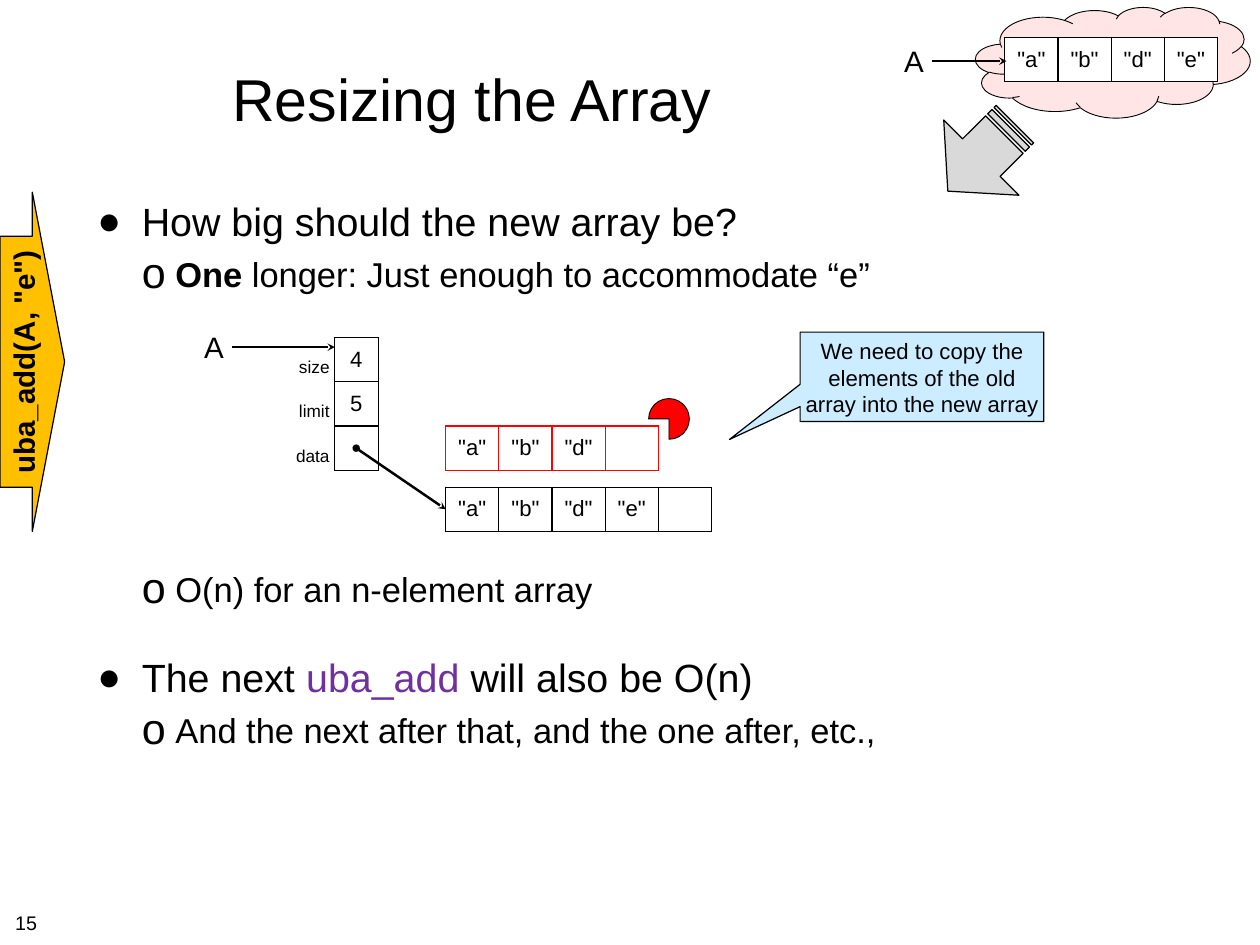
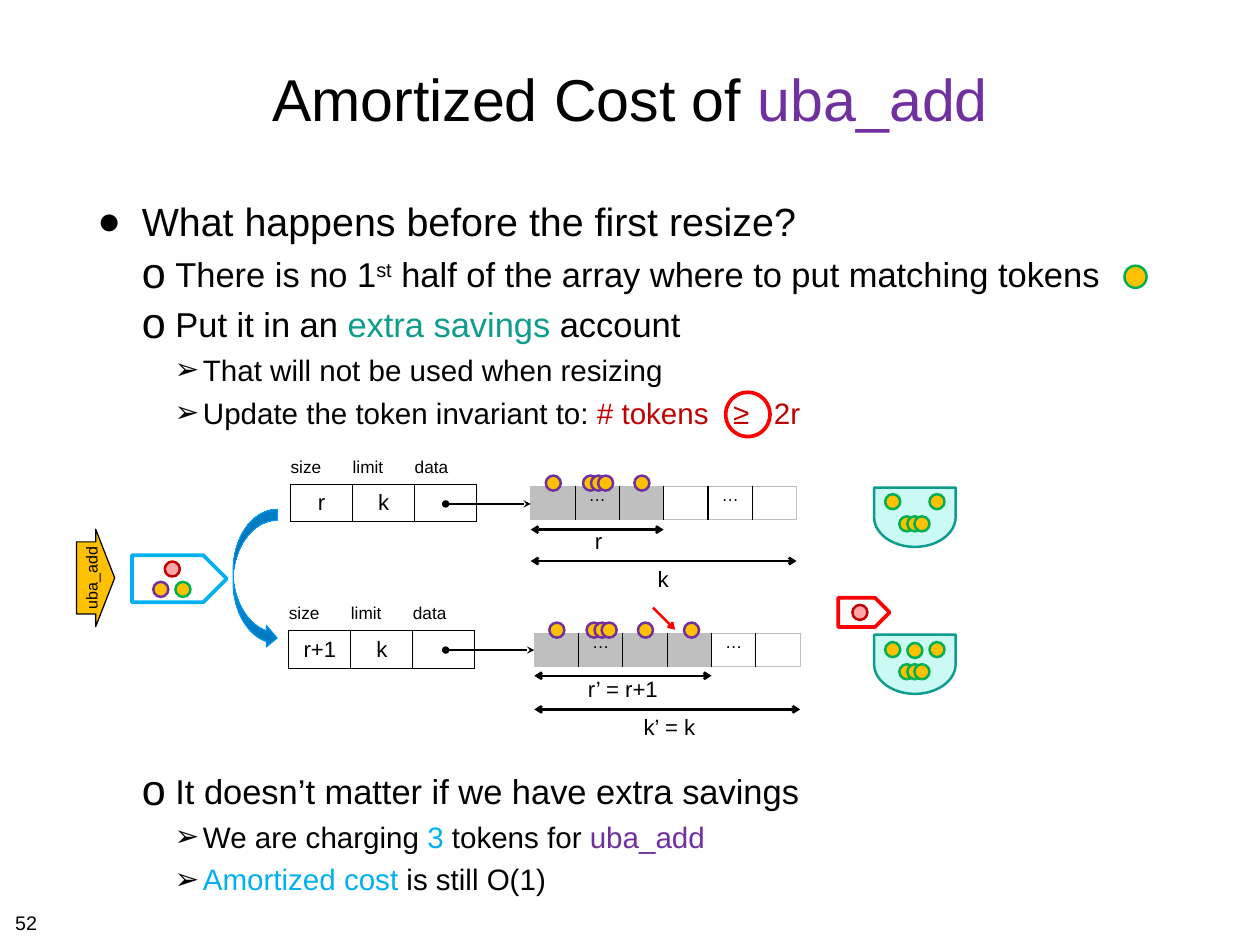
"""Builds two slides on resizing an array and on the amortized cost of uba_add."""
from lxml.etree import SubElement
from pptx import Presentation
from pptx.dml.color import RGBColor
from pptx.enum.shapes import MSO_CONNECTOR, MSO_SHAPE as Kind
from pptx.enum.text import MSO_ANCHOR as Anchor, MSO_AUTO_SIZE as AutoSize, PP_ALIGN as Align
from pptx.oxml.ns import qn
from pptx.util import Inches, Pt

BLACK = RGBColor(0x00, 0x00, 0x00)
WHITE = RGBColor(0xFF, 0xFF, 0xFF)
SHADE = RGBColor(0xBF, 0xBF, 0xBF)
GREY = RGBColor(0xD9, 0xD9, 0xD9)
RED = RGBColor(0xFF, 0x00, 0x00)
DARK_RED = RGBColor(0xC0, 0x00, 0x00)
PINK = RGBColor(0xFF, 0xA6, 0xA6)
ROSE = RGBColor(0xFF, 0xE5, 0xE5)
GOLD = RGBColor(0xFF, 0xC0, 0x00)
GREEN = RGBColor(0x00, 0xB0, 0x50)
PURPLE = RGBColor(0x70, 0x30, 0xA0)
TEAL = RGBColor(0x0E, 0x9D, 0x8C)
MINT = RGBColor(0xCB, 0xFA, 0xF5)
SKY = RGBColor(0x00, 0xB0, 0xF0)
PALE_BLUE = RGBColor(0xCC, 0xEC, 0xFF)
DEEP_BLUE = RGBColor(0x00, 0x79, 0xBE)
BRIGHT_BLUE = RGBColor(0x00, 0x9D, 0xF7)

FONT = "Arial"
CELL = Inches(0.5)
TOKEN = 0.34
BULLETS = [
    ("●", 0.5, 0.5, 100, 32, 8),
    ("o", 0.88, 0.38, 125, 28, 7),
    ("➢", 1.19, 0.32, 100, 24, 6),
]


def write(paragraph, text, size, align=Align.LEFT):
    if isinstance(text, str):
        paragraph.text = text
        colours = [BLACK] * len(paragraph.runs)
    else:
        for words, _ in text:
            paragraph.add_run().text = words
        colours = [colour for _, colour in text]
    paragraph.alignment = align
    for run, colour in zip(paragraph.runs, colours):
        run.font.name = FONT
        run.font.size = Pt(size)
        run.font.color.rgb = colour


def draw(slide, kind, x, y, w, h, fill, line, weight, rotation=0):
    shape = slide.shapes.add_shape(kind, *(int(v * CELL) for v in (x, y, w, h)))
    shape.shadow.inherit = False
    shape.rotation = rotation
    if fill is None:
        shape.fill.background()
    else:
        shape.fill.solid()
        shape.fill.fore_color.rgb = fill
    shape.line.color.rgb = line
    shape.line.width = Pt(weight)
    return shape


deck = Presentation()
deck.slide_width, deck.slide_height = int(28.44 * CELL), int(21.34 * CELL)
resizing, amortized = [deck.slides.add_slide(deck.slide_layouts[1]) for _ in range(2)]

outlines = [
    (resizing, 17.14, [("Resizing the Array", BLACK)], [
        (0, None, "How big should the new array be?"),
        (1, None, [("One", BLACK), (" longer: Just enough to accommodate “e”", BLACK)]),
        (1, 222, "O(n) for an n-element array"),
        (0, 36, [("The next ", BLACK), ("uba_add", PURPLE), (" will also be O(n)", BLACK)]),
        (1, None, "And the next after that, and the one after, etc.,"),
    ]),
    (amortized, 24.28, [("Amortized Cost of ", BLACK), ("uba_add", PURPLE)], [
        (0, None, "What happens before the first resize?"),
        (1, None, [("There is no 1", BLACK), ("st", BLACK),
                   (" half of the array where to put matching tokens", BLACK)]),
        (1, None, [("Put it in an ", BLACK), ("extra savings ", TEAL), ("account", BLACK)]),
        (2, None, "That will not be used when resizing"),
        (2, None, [("Update the token invariant to: ", BLACK), ("# tokens", DARK_RED),
                   (" ", DARK_RED), ("≥", DARK_RED), (" ", DARK_RED), ("2r", DARK_RED)]),
        (1, 276, "It doesn’t matter if we have extra savings"),
        (2, None, [("We are charging ", BLACK), ("3", SKY), (" tokens for ", BLACK),
                   ("uba_add", PURPLE)]),
        (2, None, [("Amortized cost ", SKY), ("is still O(1)", BLACK)]),
    ]),
]
for slide, title_width, heading, points in outlines:
    title, body = slide.shapes.title, slide.placeholders[1]
    for holder, top, width, height in ((title, 0.56, title_width, 3.28), (body, 4.34, 24.4, 15.08)):
        holder.left, holder.top = int(2.08 * CELL), int(top * CELL)
        holder.width, holder.height = int(width * CELL), int(height * CELL)
        frame = holder.text_frame
        frame.auto_size = AutoSize.NONE
        frame.margin_left = frame.margin_right = Inches(0.06)
        frame.margin_top = frame.margin_bottom = Inches(0.06)
    title.text_frame.vertical_anchor = Anchor.MIDDLE
    write(title.text_frame.paragraphs[0], heading, 48, Align.CENTER)
    for number, (level, gap, text) in enumerate(points):
        frame = body.text_frame
        point = frame.add_paragraph() if number else frame.paragraphs[0]
        mark, margin, hang, percent, size, before = BULLETS[level]
        write(point, text, size)
        point.level = level
        point.space_before = Pt(gap or before)
        props = point._p.get_or_add_pPr()
        props.set("marL", str(Inches(margin)))
        props.set("indent", str(-Inches(hang)))
        SubElement(SubElement(props, qn("a:buClr")), qn("a:srgbClr"), val=str(BLACK))
        SubElement(props, qn("a:buSzPct"), val=str(percent * 1000))
        SubElement(props, qn("a:buFont"), typeface=FONT)
        SubElement(props, qn("a:buChar"), char=mark)

resizing.placeholders[1].text_frame.paragraphs[1].runs[0].font.bold = True
savings_points = amortized.placeholders[1].text_frame.paragraphs
savings_points[1].runs[1]._r.get_or_add_rPr().set("baseline", "30000")
for gap_run in (savings_points[4].runs[2], savings_points[4].runs[4]):
    gap_run._r.get_or_add_rPr().set("spc", "1330")

draw(resizing, Kind.PIE, 14.64, 9, 0.92, 0.92, RED, BLACK, 0.75, 180)
draw(resizing, Kind.CLOUD, 22.02, 0.16, 6.2, 2.5, ROSE, BLACK, 0.75)
draw(resizing, Kind.STRIPED_RIGHT_ARROW, 21.08, 2.36, 2.14, 2.4, GREY, BLACK, 1, 135)
call = draw(resizing, Kind.DOWN_ARROW, -3.1, 7.44, 7.66, 1.46, GOLD, BLACK, 1, 270)
callout = draw(resizing, Kind.RECTANGULAR_CALLOUT, 18.06, 7.5, 5.5, 2.02, PALE_BLUE, BLACK, 1)
callout.adjustments[0], callout.adjustments[1] = -0.79, 0.7
small_call = draw(amortized, Kind.DOWN_ARROW, 1.06, 12.62, 2.2, 0.86, GOLD, BLACK, 1, 270)
for arrow in (call, small_call):
    arrow.adjustments[0], arrow.adjustments[1] = 0.74, 0.5
for shape, text, size in (
    (call, 'uba_add(A, "e")', 24),
    (callout, "We need to copy the\velements of the old\varray into the new array", 18),
    (small_call, "uba_add", 13),
):
    frame = shape.text_frame
    frame.word_wrap = False
    frame.vertical_anchor = Anchor.MIDDLE
    frame.margin_left = frame.margin_right = frame.margin_top = Inches(0.06)
    frame.margin_bottom = Inches(0.05) if shape is callout else 0
    write(frame.paragraphs[0], text, size, Align.CENTER)
call.text_frame.paragraphs[0].runs[0].font.bold = True

turn = draw(amortized, Kind.CURVED_RIGHT_ARROW, 5.26, 11.5, 1, 3.16, BRIGHT_BLUE, BRIGHT_BLUE, 0.75)
turn.fill.gradient()
turn.fill.gradient_angle = 90
for stop, colour in zip(turn.fill.gradient_stops, (DEEP_BLUE, BRIGHT_BLUE)):
    stop.color.rgb = colour
draw(amortized, Kind.PENTAGON, 2.98, 12.54, 2.14, 1.06, None, SKY, 3)
draw(amortized, Kind.PENTAGON, 18.92, 13.5, 1.16, 0.66, None, RED, 3)
draw(amortized, Kind.OVAL, 16.38, 8.86, 1, 1, None, RED, 3)
for pouch_top in (10.76, 14.08):
    draw(amortized, Kind.FLOWCHART_DELAY, 19.98, pouch_top, 1.34, 1.84, MINT, TEAL, 2, 90)

LABELS = ("size", "limit", "data")
old_row, new_row = [['"a"', '"b"', '"d"', ""]], [['"a"', '"b"', '"d"', '"e"', ""]]
span = [["", "…", "", "", "…", ""]]
tables = [
    (resizing, 6.14, 7.62, [1.4, 1], [1] * 3, list(zip(LABELS, ("4", "5", ""))), BLACK, BLACK, 0),
    (resizing, 10.06, 11, [1.2] * 5, [1], new_row, BLACK, BLACK, 0),
    (resizing, 10.06, 9.62, [1.2] * 4, [1], old_row, RED, RED, 0),
    (resizing, 22.68, 0.84, [1.2] * 4, [1], [new_row[0][:4]], BLACK, BLACK, 0),
    (amortized, 11.98, 10.98, [1] * 6, [0.76], span, SHADE, BLACK, 3),
    (amortized, 6.56, 10.34, [1.4] * 3, [0.6, 0.84], [LABELS, ("r", "k", "")], BLACK, BLACK, 0),
    (amortized, 12.06, 14.3, [1] * 6, [0.76], span, SHADE, BLACK, 4),
    (amortized, 6.52, 13.64, [1.4] * 3, [0.6, 0.86], [LABELS, ("r+1", "k", "")], BLACK, BLACK, 0),
]
for slide, x, y, widths, heights, rows, rim, divider, shaded in tables:
    box = [int(v * CELL) for v in (x, y, sum(widths), sum(heights))]
    table = slide.shapes.add_table(len(heights), len(widths), *box).table
    table.first_row = table.horz_banding = False
    for column, width in zip(table.columns, widths):
        column.width = int(width * CELL)
    on_side = slide is resizing
    for r, texts in enumerate(rows):
        table.rows[r].height = int(heights[r] * CELL)
        for c, text in enumerate(texts):
            cell = table.cell(r, c)
            is_label = text in LABELS
            cell.margin_left = cell.margin_right = Inches(0.05 if on_side else 0)
            cell.margin_top = cell.margin_bottom = Inches(0.05 if on_side else 0)
            cell.vertical_anchor = Anchor.MIDDLE
            align, size = Align.CENTER, 18
            if is_label:
                align, size = Align.RIGHT if on_side else Align.LEFT, 14
                cell.vertical_anchor = Anchor.BOTTOM if on_side else Anchor.TOP
            elif text == "…":
                size = 14
                cell.vertical_anchor = Anchor.TOP
            write(cell.text_frame.paragraphs[0], text, size, align)
            inner = {"L": c > 0, "R": c < len(widths) - 1}
            for side in "LRTB":
                edge = SubElement(cell._tc.get_or_add_tcPr(), qn("a:ln" + side), w=str(Pt(1)))
                if is_label and side != ("R" if on_side else "B"):
                    SubElement(edge, qn("a:noFill"))
                else:
                    colour = divider if inner.get(side) else rim
                    SubElement(SubElement(edge, qn("a:solidFill")), qn("a:srgbClr"), val=str(colour))
            if is_label:
                cell.fill.background()
            else:
                cell.fill.solid()
                cell.fill.fore_color.rgb = SHADE if c < shaded else WHITE

arrows = [
    (resizing, 8.04, 10.12, 10.06, 11.5, BLACK, "oval", "stealth"),
    (resizing, 5.24, 7.84, 7.56, 7.84, BLACK, "none", "stealth"),
    (resizing, 21.04, 1.38, 22.72, 1.38, BLACK, "none", "stealth"),
    (amortized, 10.06, 11.38, 11.98, 11.38, BLACK, "oval", "stealth"),
    (amortized, 11.98, 11.96, 14.98, 11.96, BLACK, "arrow", "arrow"),
    (amortized, 11.98, 12.67, 17.98, 12.67, BLACK, "arrow", "arrow"),
    (amortized, 10.06, 14.68, 12.06, 14.68, BLACK, "oval", "stealth"),
    (amortized, 12.06, 15.26, 16.06, 15.26, BLACK, "arrow", "arrow"),
    (amortized, 12.06, 16.02, 18.06, 16.02, BLACK, "arrow", "arrow"),
    (amortized, 14.74, 13.72, 15.24, 14.22, RED, "none", "arrow"),
]
for slide, *ends, colour, head, tail in arrows:
    arrow = slide.shapes.add_connector(MSO_CONNECTOR.STRAIGHT, *(int(v * CELL) for v in ends))
    arrow.line.color.rgb = colour
    arrow.line.width = Pt(2)
    stroke = arrow.line._get_or_add_ln()
    SubElement(stroke, qn("a:headEnd"), type=head)
    SubElement(stroke, qn("a:tailEnd"), type=tail)
    SubElement(arrow._element.spPr, qn("a:effectLst"))

tokens = [
    (3.72, 12.68, PINK, DARK_RED),
    (3.46, 13.14, GOLD, PURPLE),
    (3.96, 13.14, GOLD, GREEN),
    (19.24, 13.66, PINK, DARK_RED),
    (15.44, 14.06, GOLD, PURPLE),
    (20.48, 14.52, GOLD, GREEN),
]
for array_left, token_top in ((11.98, 10.74), (12.06, 14.06)):
    tokens += [(array_left + dx, token_top, GOLD, PURPLE) for dx in (0.34, 1.18, 1.36, 1.52, 2.34)]
for token_top in (11.16, 14.5):
    tokens += [(x, token_top, GOLD, GREEN) for x in (19.98, 20.98)]
    tokens += [(x, token_top + 0.5, GOLD, GREEN) for x in (20.3, 20.48, 20.64)]
for x, y, fill, rim in tokens:
    draw(amortized, Kind.OVAL, x, y, TOKEN, TOKEN, fill, rim, 2)
draw(amortized, Kind.OVAL, 25.38, 6, 0.5, 0.5, GOLD, GREEN, 2)

captions = [
    (resizing, 4.4, 7.34, 0.86, 1, "A", 24),
    (resizing, 20.2, 0.88, 0.86, 1, "A", 24),
    (amortized, 13.22, 11.8, 0.58, 0.8, "r", 18),
    (amortized, 14.64, 12.66, 0.66, 0.8, "k", 18),
    (amortized, 13.06, 15.16, 2, 0.8, "r’ = r+1", 18),
    (amortized, 14.32, 16.02, 1.58, 0.8, "k’ = k", 18),
    (resizing, 0.14, 20.48, 0.9, 0.7, "15", 16),
    (amortized, 0.14, 20.48, 0.9, 0.7, "52", 16),
]
for slide, *box, text, size in captions:
    caption = slide.shapes.add_textbox(*(int(v * CELL) for v in box)).text_frame
    caption.word_wrap = False
    write(caption.paragraphs[0], text, size, Align.CENTER)

deck.save("out.pptx")
